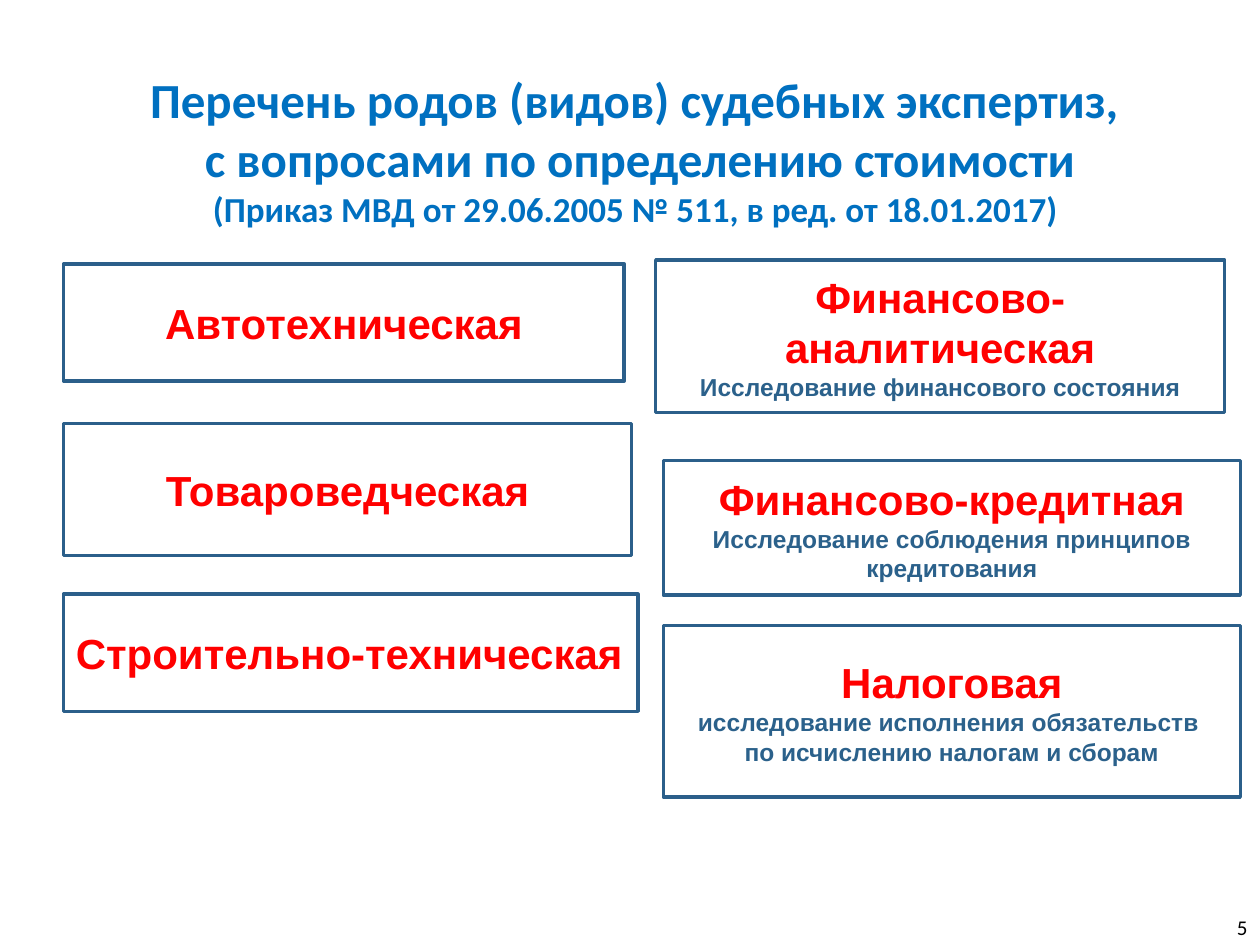
from pptx import Presentation
from pptx.dml.color import RGBColor
from pptx.enum.shapes import MSO_SHAPE as Shape
from pptx.enum.text import MSO_ANCHOR as Anchor, PP_ALIGN as Align
from pptx.util import Pt

PX = 914.4  # EMU, 1000 px to the inch
BLUE = RGBColor(0x00, 0x70, 0xC0)
RED = RGBColor(0xFF, 0x00, 0x00)
BORDER = RGBColor(0x2B, 0x5F, 0x8A)
DETAIL = RGBColor(0x2B, 0x61, 0x8B)
BLACK = RGBColor(0x00, 0x00, 0x00)

TITLE = [
    ("Перечень родов (видов) судебных экспертиз, ", 28),
    ("с вопросами по определению стоимости", 28),
    ("(Приказ МВД от 29.06.2005 № 511, в ред. от 18.01.2017) ", 20),
]
EXPERTISES = [
    ((504, 2094, 4450, 930), Align.CENTER, "Автотехническая", []),
    ((504, 3360, 4510, 1050), Align.CENTER, "Товароведческая", []),
    ((504, 4716, 4560, 930), Align.LEFT, "Строительно-техническая", []),
    ((5204, 2064, 4516, 1210), Align.CENTER, "Финансово-аналитическая",
     ["Исследование финансового состояния"]),
    ((5264, 3654, 4580, 1070), Align.CENTER, "Финансово-кредитная",
     ["Исследование соблюдения принципов кредитования"]),
    ((5264, 4966, 4580, 1360), Align.CENTER, "Налоговая",
     ["исследование исполнения обязательств ", "по исчислению налогам и сборам"]),
]
PAGE_NUMBER = "5"


def emu(box):
    """Turn px lengths into EMU."""
    return [round(length * PX) for length in box]


def write(frame, lines, font, align, anchor, bold=True):
    """Fill a text frame with (text, size, colour) lines."""
    frame.word_wrap = True
    frame.vertical_anchor = anchor
    for i, (text, size, colour) in enumerate(lines):
        line = frame.add_paragraph() if i else frame.paragraphs[0]
        line.text = text
        line.alignment = align
        line.font.name = font
        line.font.size = Pt(size)
        line.font.bold = bold
        line.font.color.rgb = colour


def add_expertise(slide, box, align, name, details):
    """Draw one outlined box with a kind of expertise."""
    panel = slide.shapes.add_shape(Shape.RECTANGLE, *emu(box))
    panel.shadow.inherit = False
    panel.fill.background()
    panel.line.color.rgb = BORDER
    panel.line.width = Pt(2)
    lines = [(name, 24, RED)] + [(detail, 14, DETAIL) for detail in details]
    write(panel.text_frame, lines, "Arial", align, Anchor.MIDDLE)


def main():
    """Build the slide and save it."""
    deck = Presentation()
    deck.slide_width, deck.slide_height = emu((10000, 7500))
    slide = deck.slides.add_slide(deck.slide_layouts[6])

    title = slide.shapes.add_textbox(*emu((467, 505, 9220, 1380)))
    write(title.text_frame, [(text, size, BLUE) for text, size in TITLE],
          "Calibri", Align.CENTER, Anchor.TOP)

    for expertise in EXPERTISES:
        add_expertise(slide, *expertise)

    number = slide.shapes.add_textbox(*emu((9420, 7220, 580, 280)))
    write(number.text_frame, [(PAGE_NUMBER, 12, BLACK)],
          "Calibri", Align.RIGHT, Anchor.MIDDLE, bold=False)

    deck.save("out.pptx")


if __name__ == "__main__":
    main()
